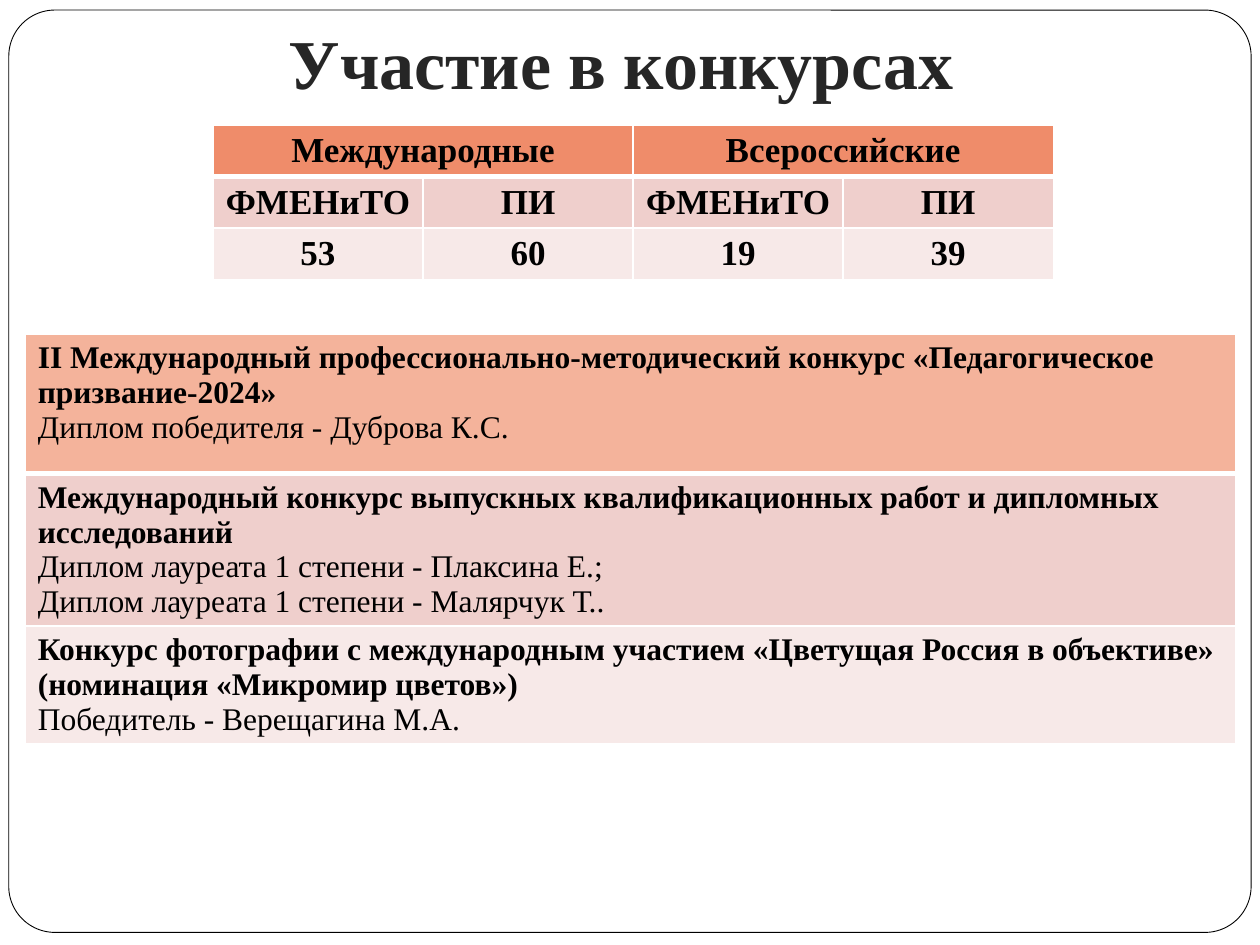
from dataclasses import dataclass

import pptx
import pptx.dml.color
import pptx.enum.shapes
import pptx.enum.text
import pptx.oxml.ns
import pptx.util
from lxml import etree

Inches = pptx.util.Inches
Pt = pptx.util.Pt
Align = pptx.enum.text.PP_ALIGN


@dataclass(frozen=True)
class Theme:
    font: str = "Times New Roman"
    title_size: int = 40
    count_size: int = 20
    award_size: int = 18
    white: str = "FFFFFF"
    black: str = "000000"
    title: str = "262626"
    count_header: str = "EF8C6A"
    award_header: str = "F4B39B"
    band_dark: str = "EFCFCC"
    band_light: str = "F7E9E8"


@dataclass(frozen=True)
class Award:
    contest: str
    winners: tuple[str, ...]
    height: float


THEME = Theme()

COUNT_GROUPS = ("Международные", "Всероссийские")
COUNT_ROWS = (
    ("ФМЕНиТО", "ПИ", "ФМЕНиТО", "ПИ"),
    ("53", "60", "19", "39"),
)

AWARDS = (
    Award(
        "II Международный профессионально-методический конкурс "
        "«Педагогическое призвание-2024»",
        ("Диплом победителя - Дуброва К.С.",),
        1.11,
    ),
    Award(
        "Международный конкурс выпускных квалификационных работ "
        "и дипломных исследований",
        (
            "Диплом лауреата 1 степени - Плаксина Е.;",
            "Диплом лауреата 1 степени - Малярчук Т..",
        ),
        1.21,
    ),
    Award(
        "Конкурс фотографии с международным участием «Цветущая Россия "
        "в объективе» (номинация «Микромир цветов»)",
        ("Победитель - Верещагина М.А.",),
        0.93,
    ),
)


def rgb(value: str) -> pptx.dml.color.RGBColor:
    return pptx.dml.color.RGBColor.from_string(value)


def format_paragraph(para, size: int, color: str, bold: bool, align) -> None:
    para.alignment = align
    for span in para.runs:
        span.font.name = THEME.font
        span.font.size = Pt(size)
        span.font.bold = bold
        span.font.color.rgb = rgb(color)


def add_border(cell, side: str, points: float) -> None:
    qn = pptx.oxml.ns.qn
    properties = cell._tc.get_or_add_tcPr()
    line = etree.SubElement(properties, qn(f"a:ln{side}"), w=str(Pt(points)))
    fill = etree.SubElement(line, qn("a:solidFill"))
    etree.SubElement(fill, qn("a:srgbClr"), val=THEME.white)


def style_cell(cell, row: int, header_color: str) -> None:
    """Fill by row, with a thick rule below the header row."""
    widths = {"L": 1, "R": 1, "T": 3 if row == 1 else 1, "B": 3 if row == 0 else 1}
    for side, points in widths.items():
        add_border(cell, side, points)
    cell.fill.solid()
    colors = (header_color, THEME.band_dark, THEME.band_light)
    cell.fill.fore_color.rgb = rgb(colors[row])


def add_frame(page) -> None:
    frame = page.shapes.add_shape(
        pptx.enum.shapes.MSO_SHAPE.ROUNDED_RECTANGLE,
        Inches(0.07), Inches(0.08), Inches(9.86), Inches(7.32),
    )
    frame.adjustments[0] = 0.05
    frame.shadow.inherit = False
    frame.fill.solid()
    frame.fill.fore_color.rgb = rgb(THEME.white)
    frame.line.color.rgb = rgb(THEME.black)
    frame.line.width = Pt(0.5)
    # The frame lies behind the title
    page.shapes.title.element.addprevious(frame.element)


def set_title(page, text: str) -> None:
    title = page.shapes.title
    title.left, title.top = Inches(0.43), Inches(0)
    title.width, title.height = Inches(9), Inches(0.92)
    box = title.text_frame
    box.text = text
    box.auto_size = pptx.enum.text.MSO_AUTO_SIZE.NONE
    box.vertical_anchor = pptx.enum.text.MSO_ANCHOR.BOTTOM
    box.margin_bottom = Inches(0.1)
    format_paragraph(box.paragraphs[0], THEME.title_size, THEME.title, True, Align.CENTER)


def add_awards(page) -> None:
    table = page.shapes.add_table(
        len(AWARDS), 1, Inches(0.2), Inches(2.65), Inches(9.61),
        Inches(sum(award.height for award in AWARDS)),
    ).table
    for row, award in enumerate(AWARDS):
        table.rows[row].height = Inches(award.height)
        cell = table.cell(row, 0)
        style_cell(cell, row, THEME.award_header)
        cell.text_frame.text = "\n".join((award.contest, *award.winners))
        for index, para in enumerate(cell.text_frame.paragraphs):
            format_paragraph(para, THEME.award_size, THEME.black, index == 0, Align.LEFT)


def add_counts(page) -> None:
    row_height = 0.41
    row_count, column_count = len(COUNT_ROWS) + 1, len(COUNT_ROWS[0])
    table = page.shapes.add_table(
        row_count, column_count, Inches(1.69), Inches(0.99),
        Inches(6.67), Inches(row_height * row_count),
    ).table
    # Each group heading covers an equal share of the columns
    share = column_count // len(COUNT_GROUPS)
    for index, group in enumerate(COUNT_GROUPS):
        first = table.cell(0, index * share)
        first.merge(table.cell(0, (index + 1) * share - 1))
        first.text_frame.text = group
    for row, values in enumerate(COUNT_ROWS, start=1):
        for column, value in enumerate(values):
            table.cell(row, column).text_frame.text = value
    for row in range(row_count):
        for column in range(column_count):
            cell = table.cell(row, column)
            style_cell(cell, row, THEME.count_header)
            format_paragraph(
                cell.text_frame.paragraphs[0], THEME.count_size,
                THEME.black, True, Align.CENTER,
            )


def main() -> None:
    deck = pptx.Presentation()
    deck.slide_width, deck.slide_height = Inches(10), Inches(7.5)
    page = deck.slides.add_slide(deck.slide_layouts[5])

    # Frame and heading
    add_frame(page)
    set_title(page, "Участие в конкурсах")

    # Awards below, totals above
    add_awards(page)
    add_counts(page)

    deck.save("out.pptx")


if __name__ == "__main__":
    main()
